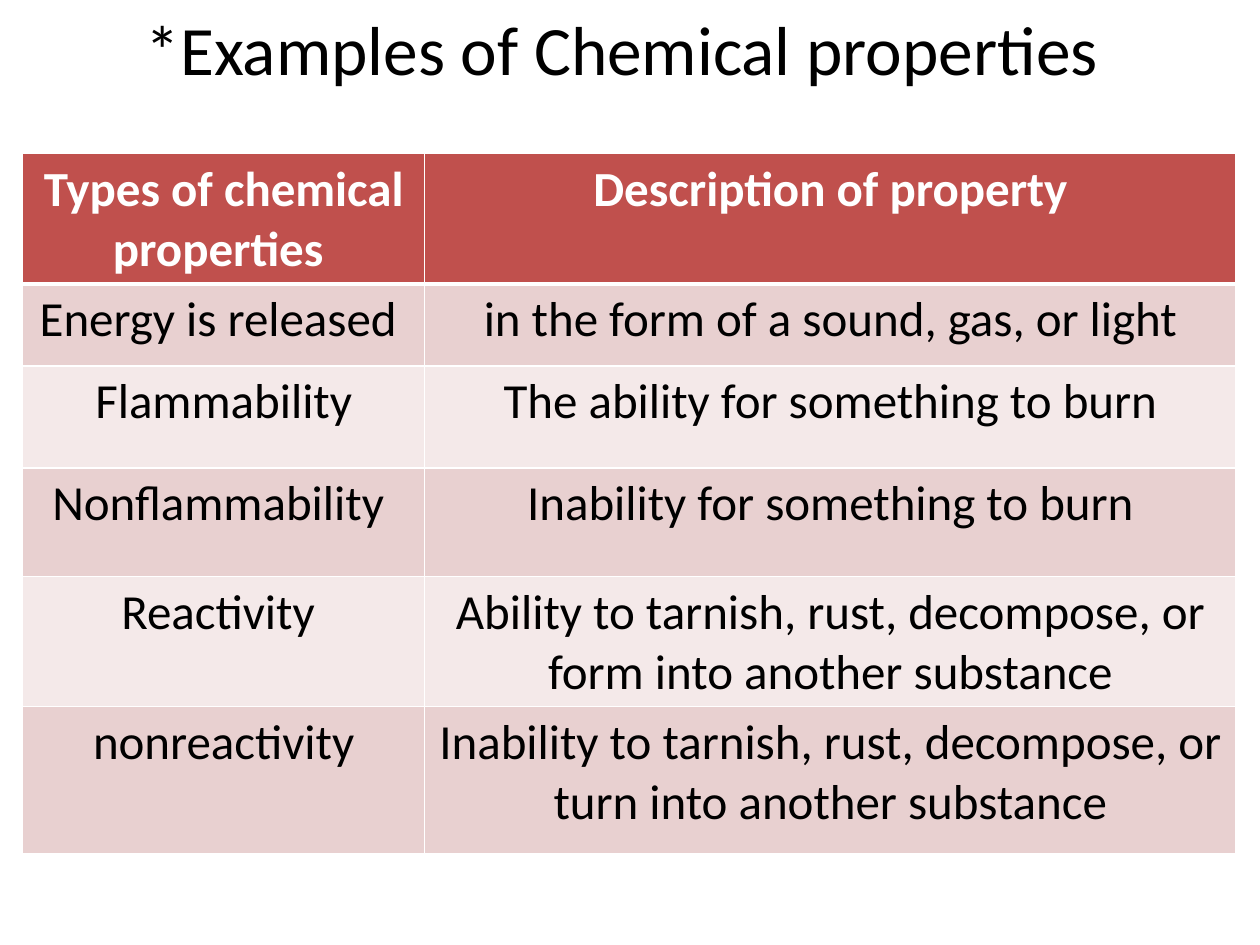
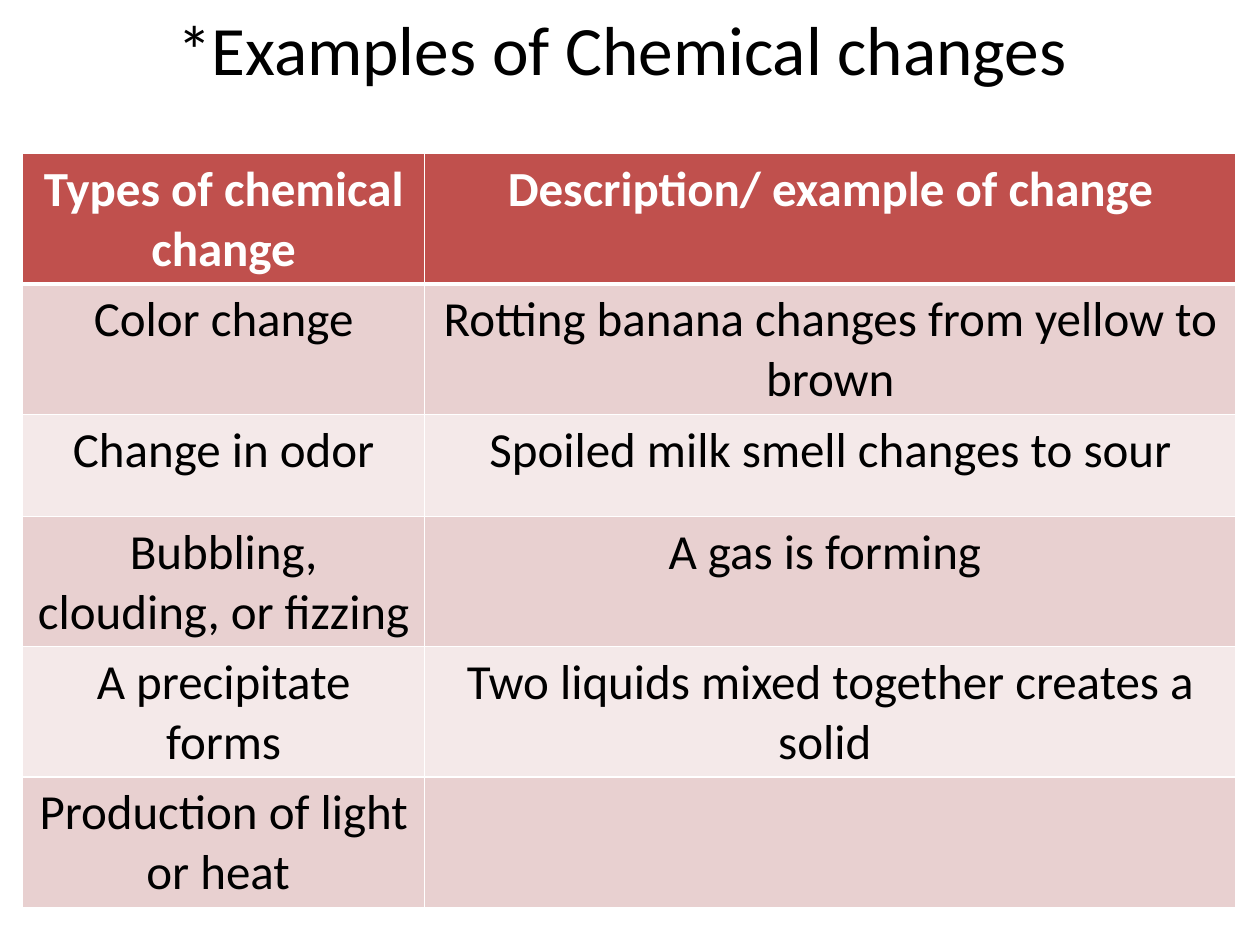
from dataclasses import dataclass

from lxml.etree import SubElement
from pptx import Presentation
from pptx.dml.color import RGBColor
from pptx.enum.text import MSO_ANCHOR, PP_ALIGN
from pptx.oxml.ns import qn
from pptx.util import Emu, Pt

# Shared scale, colours and text formats
UNIT = 9144  # 100 px to the inch
WHITE, BLACK, RED = "FFFFFF", "000000", "C0504D"
BANDS = ("E8D0D0", "F4E9E9")
COLS = (319, 644)
TITLE = {"name": "Calibri", "size": Pt(39.6), "bold": False}
HEAD = {"name": "Calibri", "size": Pt(28), "bold": True}
BODY = {**HEAD, "bold": False}


@dataclass
class Page:
    title: str
    last: int  # height of the last row
    rows: list[tuple[str, str]]

    @property
    def highs(self) -> list[int]:
        return [81, 65, 81, 86, 81, self.last]


PAGES = [
    Page("*Examples of Chemical properties ", 117, [
        ("Types of chemical properties ", "Description of property"),
        ("Energy is released ", "in the form of a sound, gas, or light"),
        ("Flammability", "The ability for something to burn"),
        ("Nonflammability ", "Inability for something to burn"),
        ("Reactivity ", "Ability to tarnish, rust, decompose, or form into another substance"),
        ("nonreactivity", "Inability to tarnish, rust, decompose, or turn into another substance"),
    ]),
    Page("*Examples of Chemical changes ", 81, [
        ("Types of chemical change", "Description/ example of change"),
        ("Color change", "Rotting banana changes from yellow to brown"),
        ("Change in odor", "Spoiled milk smell changes to sour"),
        ("Bubbling, clouding, or fizzing", "A gas is forming "),
        ("A precipitate forms", "Two liquids mixed together creates a solid "),
        ("Production of light or heat ", ""),
    ]),
]


def px(num: int) -> Emu:
    return Emu(num * UNIT)


def tint(code: str) -> RGBColor:
    return RGBColor.from_string(code)


def write(frame, text: str, style: dict, code: str) -> None:
    """Put one centred line of styled text in a frame."""
    para = frame.paragraphs[0]
    para.alignment = PP_ALIGN.CENTER
    if not text:
        return
    run = para.add_run()
    run.text = text
    for key, value in style.items():
        setattr(run.font, key, value)
    run.font.color.rgb = tint(code)


def edge(cell, sides: dict[str, int]) -> None:
    """Draw white cell borders, with widths in points."""
    props = cell._tc.get_or_add_tcPr()
    for side, wide in sides.items():
        line = SubElement(props, qn(f"a:ln{side}"), w=str(Pt(wide)))
        fill = SubElement(line, qn("a:solidFill"))
        SubElement(fill, qn("a:srgbClr"), val=WHITE)


def head(slide, text: str) -> None:
    box = slide.shapes.add_textbox(px(50), px(0), px(900), px(76))
    frame = box.text_frame
    frame.word_wrap = True
    frame.vertical_anchor = MSO_ANCHOR.MIDDLE
    write(frame, text, TITLE, BLACK)


def grid(slide, page: Page) -> None:
    shape = slide.shapes.add_table(len(page.rows), len(COLS), px(18), px(122),
                                   px(sum(COLS)), px(sum(page.highs)))
    table = shape.table
    table.horz_banding = False
    for col, wide in zip(table.columns, COLS):
        col.width = px(wide)
    for row, high in zip(table.rows, page.highs):
        row.height = px(high)
    for i, texts in enumerate(page.rows):
        top = i == 0
        for j, text in enumerate(texts):
            cell = table.cell(i, j)
            # The rule below the header is thicker
            edge(cell, {"L": 1, "R": 1, "T": 3 if i == 1 else 1, "B": 3 if top else 1})
            cell.fill.solid()
            cell.fill.fore_color.rgb = tint(RED if top else BANDS[(i - 1) % 2])
            write(cell.text_frame, text, HEAD if top else BODY, WHITE if top else BLACK)


def main() -> None:
    deck = Presentation()
    deck.slide_width, deck.slide_height = px(1000), px(750)
    for page in PAGES:
        slide = deck.slides.add_slide(deck.slide_layouts[6])
        head(slide, page.title)
        grid(slide, page)
    deck.save("out.pptx")


if __name__ == "__main__":
    main()
